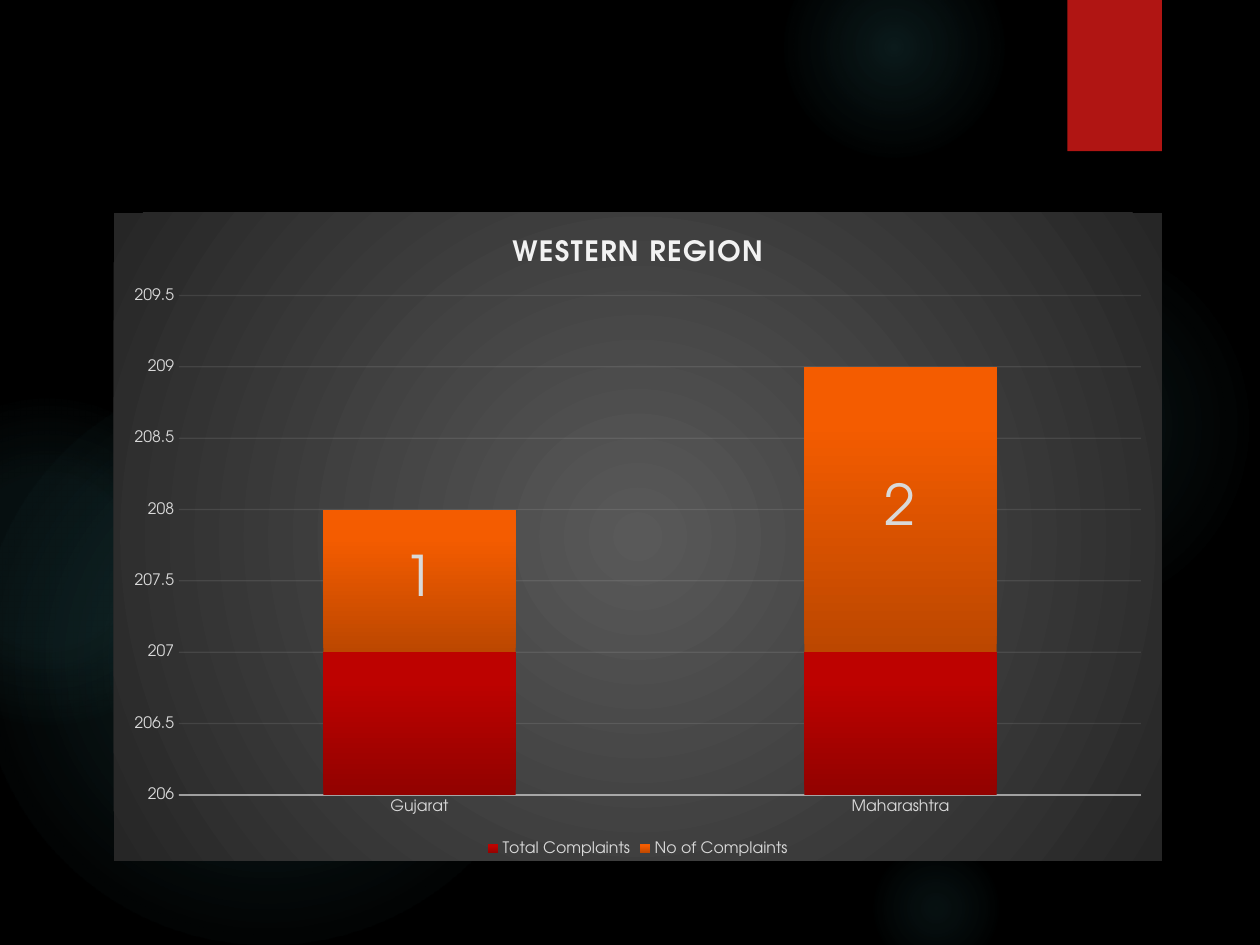
from lxml import etree
from pptx import Presentation
from pptx.chart.data import CategoryChartData
from pptx.dml.color import RGBColor
from pptx.enum.chart import XL_CHART_TYPE, XL_LABEL_POSITION, XL_LEGEND_POSITION, XL_TICK_MARK
from pptx.enum.shapes import MSO_SHAPE
from pptx.oxml.ns import qn
from pptx.util import Pt

STACKED = XL_CHART_TYPE.COLUMN_STACKED
BOTTOM = XL_LEGEND_POSITION.BOTTOM
CENTER = XL_LABEL_POSITION.CENTER
NO_TICK = XL_TICK_MARK.NONE
ELLIPSE, RECT = MSO_SHAPE.OVAL, MSO_SHAPE.RECTANGLE

FONT = "TeX Gyre Adventor"
GLOW, LIGHT, PALE = "50B9C1", "F2F2F2", "D9D9D9"

# left, top, diameter, then (position, opacity) stops in percent
GLOWS = [
    (496, 132, 222, [(0, 7), (36, 6), (69, 0)]),
    (448, -36, 126, [(0, 14), (36, 7), (73, 0)]),
    (496, 480, 78, [(0, 9), (36, 5), (66, 0)]),
    (-12, 210, 330, [(0, 11), (36, 10), (75, 0)]),
    (-66, 228, 186, [(0, 8), (36, 8), (72, 0)]),
]
CATEGORIES = ["Gujarat", "Maharashtra"]
# name, values, gradient stops
SERIES = [
    ("Total Complaints", (207, 207), [(0, "920200"), (80, "BD0200"), (100, "BE0200")]),
    ("No of Complaints", (1, 2), [(0, "BC4700"), (80, "F45C00"), (100, "F55C00")]),
]


def rgb(value):
    return RGBColor.from_string(value)


def sub(parent, tag, **attrs):
    return etree.SubElement(parent, qn(tag), {k: str(v) for k, v in attrs.items()})


def gradient(stops, angle=None):
    """Gradient fill of (position, colour[, opacity]); round without an angle."""
    grad = etree.Element(qn("a:gradFill"), rotWithShape="1")
    gs_lst = sub(grad, "a:gsLst")
    for pos, color, *opacity in stops:
        clr = sub(sub(gs_lst, "a:gs", pos=pos * 1000), "a:srgbClr", val=color)
        for pct in opacity:
            sub(clr, "a:alpha", val=pct * 1000)
    if angle is None:
        circle = sub(grad, "a:path", path="circle")
        sub(circle, "a:fillToRect", l=50000, t=50000, r=50000, b=50000)
    else:
        sub(grad, "a:lin", ang=angle * 60000, scaled=0)
    return grad


def set_gradient(fill, sp_pr_owner, grad):
    fill.solid()
    solid = next(sp_pr_owner.iter(qn("a:solidFill")))
    solid.getparent().replace(solid, grad)


def set_font(font, size, color=PALE, **extra):
    for key, value in dict(name=FONT, size=Pt(size), **extra).items():
        setattr(font, key, value)
    font.color.rgb = rgb(color)


def set_line(line, owner, width, opacity):
    line.width = Pt(width)
    line.color.rgb = rgb(LIGHT)
    sub(next(owner.iter(qn("a:srgbClr"))), "a:alpha", val=opacity * 1000)


def add_plain(s, kind, x, y, w, h):
    sp = s.shapes.add_shape(kind, Pt(x), Pt(y), Pt(w), Pt(h))
    sp.shadow.inherit = False
    sp.line.fill.background()
    return sp


def add_glow(s, x, y, size, stops):
    sp = add_plain(s, ELLIPSE, x, y, size, size)
    grad = gradient([(pos, GLOW, opacity) for pos, opacity in stops])
    set_gradient(sp.fill, sp._element.spPr, grad)


def add_ribbon(s):
    sp = add_plain(s, RECT, 610, 0, 54, 86.4)
    sp.fill.solid()
    sp.fill.fore_color.rgb = rgb("B01513")
    effects = sp._element.spPr.find(qn("a:effectLst"))
    shadow = sub(effects, "a:outerShdw", blurRad=Pt(3), dist=Pt(2), dir=90 * 60000)
    sub(sub(shadow, "a:srgbClr", val="000000"), "a:alpha", val=45000)


def style_axes(chart):
    cat, val = chart.category_axis, chart.value_axis
    for axis in (cat, val):
        axis.major_tick_mark = axis.minor_tick_mark = NO_TICK
        set_font(axis.tick_labels.font, 9)
    set_line(cat.format.line, cat._element.find(qn("c:spPr")) if
             cat._element.find(qn("c:spPr")) is not None else cat._element, 1, 54)


def style_value_axis(val):
    scale = dict(minimum_scale=206, maximum_scale=209.5, major_unit=0.5,
                 has_major_gridlines=True)
    for key, value in scale.items():
        setattr(val, key, value)
    val.format.line.fill.background()
    grid = val._element.find(qn("c:majorGridlines"))
    set_line(val.major_gridlines.format.line, grid, 0.75, 10)


def style_series(plot):
    plot.gap_width, plot.overlap, plot.vary_by_categories = 150, 100, False
    for ser, (_, _, stops) in zip(plot.series, SERIES):
        set_gradient(ser.format.fill, ser._element, gradient(stops, 270))
    labels = plot.series[1].data_labels
    labels.show_value = True
    labels.position = CENTER
    set_font(labels.font, 32)


def style_title(chart, text):
    chart.has_title = True
    p = chart.chart_title.text_frame.paragraphs[0]
    r = p.add_run()
    r.text = text
    set_font(r.font, 16, LIGHT, bold=True)
    r._r.get_or_add_rPr().set("spc", "100")
    chart.chart_title.include_in_layout = False


def add_complaints_chart(s):
    data = CategoryChartData()
    data.categories = CATEGORIES
    for name, values, _ in SERIES:
        data.add_series(name, values)
    frame = s.shapes.add_chart(STACKED, Pt(65), Pt(121.5), Pt(599), Pt(370.5), data)
    chart = frame.chart
    set_font(chart.font, 10, "FFFFFF")

    # Chart background
    area = etree.Element(qn("c:spPr"))
    area.append(gradient([(0, "595959"), (100, "262626")]))
    sub(sub(area, "a:ln"), "a:noFill")
    chart._chartSpace.find(qn("c:chart")).addnext(area)

    style_title(chart, "WESTERN REGION")
    chart.has_legend = True
    chart.legend.position = BOTTOM
    chart.legend.include_in_layout = False
    set_font(chart.legend.font, 9)
    style_value_axis(chart.value_axis)
    style_axes(chart)
    style_series(chart.plots[0])


def main():
    prs = Presentation()
    prs.slide_width, prs.slide_height = Pt(720), Pt(540)
    s = prs.slides.add_slide(prs.slide_layouts[6])

    # Backdrop
    s.background.fill.solid()
    s.background.fill.fore_color.rgb = rgb("000000")
    for glow in GLOWS:
        add_glow(s, *glow)
    add_ribbon(s)

    # Content
    add_complaints_chart(s)
    prs.save("out.pptx")


if __name__ == "__main__":
    main()
